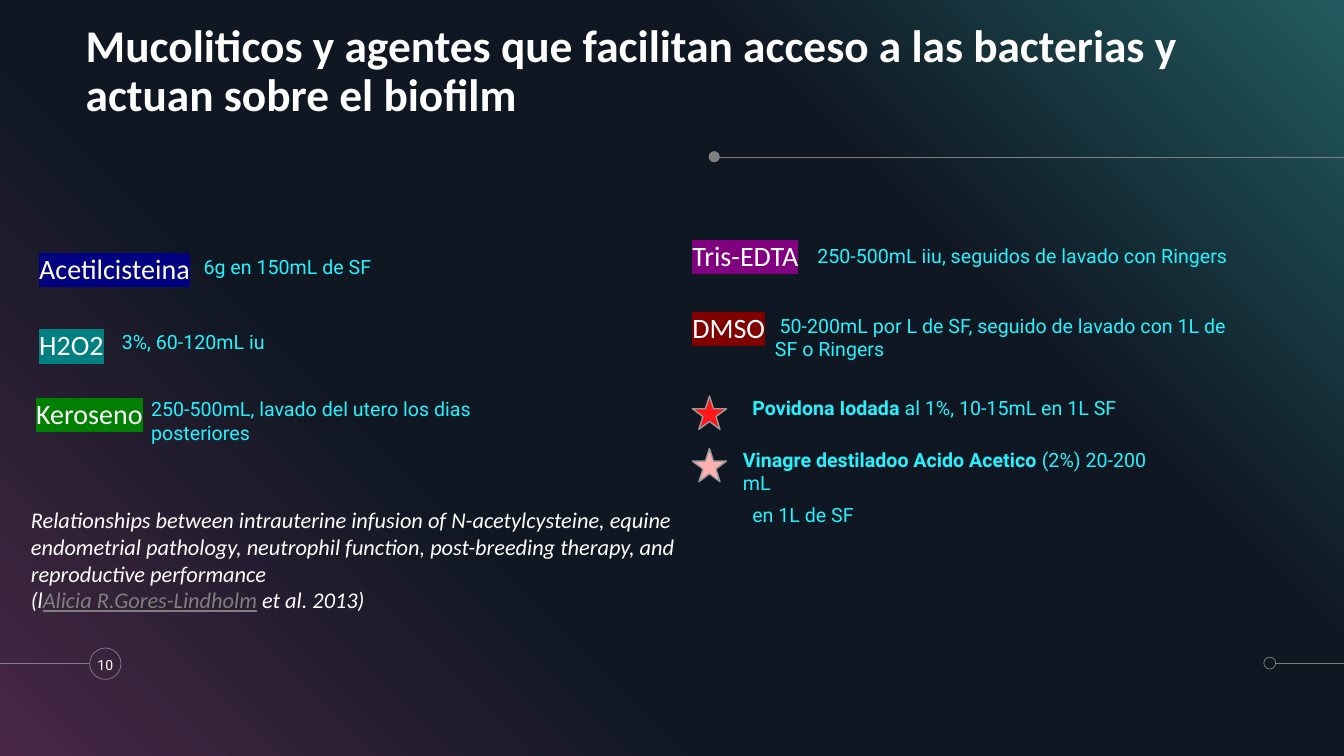
from lxml import etree
from pptx import Presentation
from pptx import util as u
from pptx.dml.color import RGBColor
from pptx.enum import shapes, text
from pptx.oxml import ns, parse_xml

WHITE = RGBColor(0xFF, 0xFF, 0xFF)
CYAN = RGBColor(0x24, 0xF3, 0xFF)
GRAY = RGBColor(0x80, 0x80, 0x80)
AUTHOR_GRAY = RGBColor(0x7F, 0x7F, 0x7F)
STAR_EDGE = RGBColor(0x99, 0x99, 0x99)
RED = RGBColor(0xFF, 0x16, 0x16)
PINK = RGBColor(0xFF, 0xB1, 0xB1)
NAVY = RGBColor(0x00, 0x00, 0x80)
TEAL = RGBColor(0x00, 0x80, 0x80)
GREEN = RGBColor(0x00, 0x80, 0x00)
PURPLE = RGBColor(0x80, 0x00, 0x80)
MAROON = RGBColor(0x80, 0x00, 0x00)
BLACK = RGBColor(0x00, 0x00, 0x00)
PLUM = RGBColor(0x48, 0x28, 0x45)
NIGHT = RGBColor(0x0F, 0x17, 0x22)
SEA = RGBColor(0x22, 0x5B, 0x5F)

WIDTH, HEIGHT = 33.87, 19.05
TITLE = {"name": "Calibri", "size": u.Pt(32.4), "bold": True}
AGENT = {"name": "Calibri", "size": u.Pt(20)}
DOSE = {"name": "Roboto", "size": u.Pt(14)}
CITATION = {"name": "Calibri", "size": u.Pt(16), "italic": True}
NUMBER = {"name": "Roboto", "size": u.Pt(10)}
TIGHT = {"line_spacing": 0.9}
SPACED = {"space_before": u.Pt(6)}


def apply(target, formats):
    for key, value in formats.items():
        setattr(target, key, value)


class SlideBuilder:
    def __init__(self, slide):
        self.slide = slide

    def backdrop(self, stops, angle):
        panel = self.shape(shapes.MSO_SHAPE.RECTANGLE, (0, 0, WIDTH, HEIGHT), fill=BLACK)
        stop_xml = "".join(
            f'<a:gs pos="{place * 1000}"><a:srgbClr val="{color}"/></a:gs>' for place, color in stops
        )
        gradient = parse_xml(
            f'<a:gradFill {ns.nsdecls("a")} rotWithShape="1"><a:gsLst>{stop_xml}</a:gsLst>'
            f'<a:lin ang="{angle * 60000}" scaled="0"/></a:gradFill>'
        )
        properties = panel.element.spPr
        properties.replace(properties.find(ns.qn("a:solidFill")), gradient)

    def shape(self, preset, box, fill=None, edge=None, weight=0.5):
        shape = self.slide.shapes.add_shape(preset, *map(u.Cm, box))
        shape.shadow.inherit = False
        if fill is None:
            shape.fill.background()
        else:
            shape.fill.solid()
            shape.fill.fore_color.rgb = fill
        if edge is None:
            shape.line.fill.background()
        else:
            shape.line.color.rgb = edge
            shape.line.width = u.Pt(weight)
        return shape

    def rule(self, start, end, y):
        rule = self.slide.shapes.add_connector(
            shapes.MSO_CONNECTOR.STRAIGHT, *map(u.Cm, (start, y, end, y))
        )
        rule.line.color.rgb = GRAY
        rule.line.width = u.Pt(0.5)
        etree.SubElement(rule.element.spPr, ns.qn("a:effectLst"))

    def text(self, box, paragraphs, style, layout=None, margins=(0, 0), anchor=text.MSO_ANCHOR.TOP):
        frame = self.slide.shapes.add_textbox(*map(u.Cm, box)).text_frame
        side, edge = map(u.Cm, margins)
        apply(frame, {
            "word_wrap": True, "vertical_anchor": anchor,
            "margin_left": side, "margin_right": side, "margin_top": edge, "margin_bottom": edge,
        })
        for index, runs in enumerate(paragraphs):
            paragraph = frame.add_paragraph() if index else frame.paragraphs[0]
            apply(paragraph, layout or {})
            for words, color, extra in runs:
                run = paragraph.add_run()
                run.text = words
                apply(run.font, {**style, **extra})
                run.font.color.rgb = color
        return frame

    def agent(self, box, name, color):
        frame = self.text(box, [[(name, WHITE, {})]], AGENT, {**TIGHT, **SPACED})
        fill = frame.paragraphs[0].runs[0].font.fill._xPr.find(ns.qn("a:solidFill"))
        fill.addnext(parse_xml(
            f'<a:highlight {ns.nsdecls("a")}><a:srgbClr val="{color}"/></a:highlight>'
        ))

    def dose(self, box, *paragraphs, indents=()):
        runs = [[(words, CYAN, {"bold": bold}) for words, bold in parts] for parts in paragraphs]
        frame = self.text(box, runs, DOSE, SPACED)
        for paragraph, (left, first) in zip(frame.paragraphs, indents):
            properties = paragraph._p.get_or_add_pPr()
            properties.set("marL", str(u.Cm(left)))
            properties.set("indent", str(u.Cm(first)))


def main():
    deck = Presentation()
    apply(deck, {"slide_width": u.Cm(WIDTH), "slide_height": u.Cm(HEIGHT)})
    page = SlideBuilder(deck.slides.add_slide(deck.slide_layouts[6]))

    page.backdrop([(0, PLUM), (34, NIGHT), (69, NIGHT), (100, SEA)], 315)
    for start, end, y in [(18.08, WIDTH, 3.96), (32.16, WIDTH, 16.71), (0, 2.24, 16.71)]:
        page.rule(start, end, y)
    for left, top, size, fill, edge in [
        (17.86, 3.81, 0.28, GRAY, None),
        (31.85, 16.56, 0.3, None, GRAY),
        (2.26, 16.33, 0.79, None, GRAY),
    ]:
        page.shape(shapes.MSO_SHAPE.OVAL, (left, top, size, size), fill, edge)

    title = "Mucoliticos y agentes que facilitan acceso a las bacterias y actuan sobre el biofilm"
    page.text((2.16, 0.33, 28.09, 2.74), [[(title, WHITE, {})]], TITLE, TIGHT,
              anchor=text.MSO_ANCHOR.BOTTOM)

    for box, name, color in [
        ((0.99, 6.43, 4.14, 1.78), "Acetilcisteina", NAVY),
        ((0.99, 8.36, 1.98, 0.79), "H2O2", TEAL),
        ((0.91, 10.08, 2.9, 1.22), "Keroseno", GREEN),
        ((17.45, 6.1, 3.15, 1.07), "Tris-EDTA", PURPLE),
        ((17.45, 7.92, 2.03, 0.94), "DMSO", MAROON),
    ]:
        page.agent(box, name, color)

    for box, amount, first in [
        ((5.13, 6.43, 5.13, 1.07), "6g en 150mL de SF", 0),
        ((3.07, 8.31, 4.14, 0.71), "3%, 60-120mL iu", 0),
        ((3.81, 10.01, 10.62, 0.84), "250-500mL, lavado del utero los dias posteriores", 0),
        ((20.6, 6.15, 12.04, 0.84), "250-500mL iiu, seguidos de lavado con Ringers", 0),
        ((19.53, 7.9, 11.63, 1.63),
         "50-200mL por L de SF, seguido de lavado con 1L de SF o Ringers", 0.12),
    ]:
        page.dose(box, [(amount, False)], indents=[(0, first)])

    for top, color in [(9.98, RED), (11.3, PINK)]:
        page.shape(shapes.MSO_SHAPE.STAR_5_POINT, (17.45, top, 0.86, 0.84), color, STAR_EDGE, 1)
    page.dose((18.72, 9.98, 11.35, 0.84),
              [("Povidona Iodada ", True), ("al 1%, 10-15mL en 1L SF", False)],
              indents=[(0.24, 0)])
    page.dose((18.72, 11.28, 10.87, 1.57),
              [("Vinagre destiladoo Acido Acetico ", True), ("(2%) 20-200 mL", False)],
              [("en 1L de SF", False)],
              indents=[(0, 0), (0.24, 0)])

    study = ("Relationships between intrauterine infusion of N-acetylcysteine, equine endometrial "
             "pathology, neutrophil function, post-breeding therapy, and reproductive performance")
    page.text((0.53, 12.62, 16.94, 3), [
        [(study, WHITE, {})],
        [("(l", WHITE, {}),
         ("Alicia R.Gores-Lindholm", AUTHOR_GRAY, {"underline": True}),
         (" et al. 2013)", WHITE, {})],
    ], CITATION, margins=(0.25, 0.13))
    page.text((2.16, 16.33, 0.99, 0.84), [[("10", WHITE, {})]], NUMBER,
              {"alignment": text.PP_ALIGN.CENTER}, anchor=text.MSO_ANCHOR.MIDDLE)

    deck.save("out.pptx")


if __name__ == "__main__":
    main()
